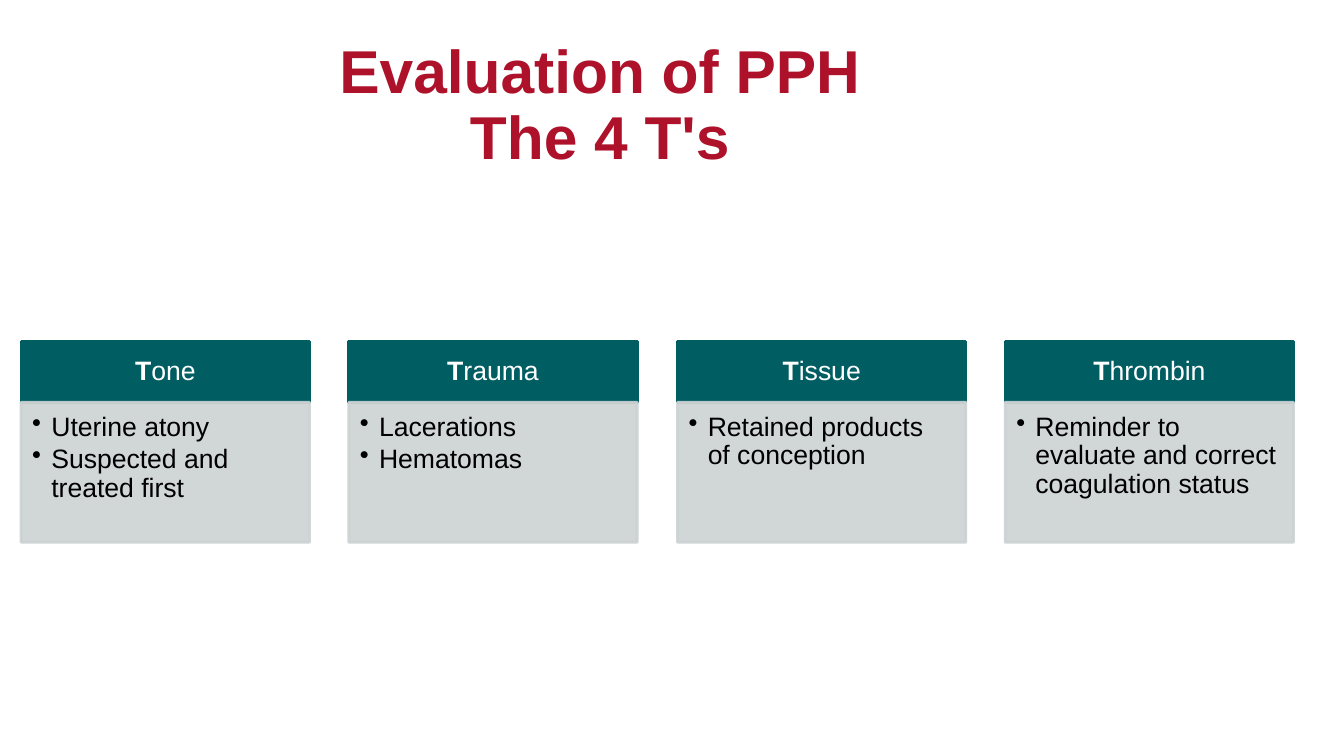
from lxml.etree import SubElement
from pptx import Presentation
from pptx.dml.color import RGBColor
from pptx.enum.shapes import MSO_SHAPE as Shape
from pptx.enum.text import MSO_ANCHOR as Anchor, MSO_AUTO_SIZE as Fit, PP_ALIGN as Align
from pptx.oxml.ns import qn
from pptx.util import Pt

PX = 9144  # 100 px to the inch
FONT = "Arial"
RED = RGBColor(0xAD, 0x12, 0x2A)
TEAL = RGBColor(0x00, 0x5E, 0x63)
GREY = RGBColor(0xCC, 0xD2, 0xD3)
WHITE = RGBColor(0xFF, 0xFF, 0xFF)
BLACK = RGBColor(0x00, 0x00, 0x00)

HEAD = 60  # height of a card's heading
CARD = 286  # width of a card
CAUSES = [
    ("Tone", ["Uterine atony", "Suspected and treated first"]),
    ("Trauma", ["Lacerations", "Hematomas"]),
    ("Tissue", ["Retained products of conception"]),
    ("Thrombin", ["Reminder to evaluate and correct coagulation status"]),
]


def style(font, size, color, bold=False):
    font.name, font.size, font.bold = FONT, Pt(size), bold
    font.color.rgb = color


def inset(frame, left, top, right, bottom):
    frame.margin_left, frame.margin_top = left * PX, top * PX
    frame.margin_right, frame.margin_bottom = right * PX, bottom * PX
    frame.word_wrap = True


def fade(paint, share):
    """Set the opacity of a solid fill, in percent."""
    color = paint.find(qn("a:solidFill"))[0]
    SubElement(color, qn("a:alpha"), val=str(share * 1000))


def panel(slide, box, color):
    shape = slide.shapes.add_shape(Shape.RECTANGLE, *(n * PX for n in box))
    shape.shadow.inherit = False
    shape.fill.solid()
    shape.fill.fore_color.rgb = color
    shape.line.color.rgb = color
    shape.line.width = Pt(2)
    return shape


def bullet(para):
    props = para._p.get_or_add_pPr()
    props.set("marL", str(19 * PX))
    props.set("indent", str(-19 * PX))
    SubElement(props, qn("a:buChar"), char="•")


def title(slide, box):
    shape = slide.shapes.title
    shape.left, shape.top, shape.width, shape.height = (n * PX for n in box)
    frame = shape.text_frame
    frame.text = "Evaluation of PPH\vThe 4 T's"
    frame.auto_size = Fit.NONE
    frame.vertical_anchor = Anchor.MIDDLE
    inset(frame, 10, 0, 10, 0)
    para = frame.paragraphs[0]
    para.alignment = Align.CENTER
    para.line_spacing = 0.9
    for run in para.runs:
        style(run.font, 43.2, RED, True)


def heading(slide, box, word):
    frame = panel(slide, box, TEAL).text_frame
    frame.vertical_anchor = Anchor.MIDDLE
    inset(frame, 15, 8, 15, 8)
    para = frame.paragraphs[0]
    para.alignment = Align.CENTER
    para.line_spacing = 0.9
    # The first letter stands out in bold
    for part, bold in ((word[0], True), (word[1:], False)):
        run = para.add_run()
        run.text = part
        style(run.font, 19, WHITE, bold)


def points(slide, box, items):
    shape = panel(slide, box, GREY)
    props = shape._element.spPr
    for paint in (props, props.find(qn("a:ln"))):
        fade(paint, 90)
    frame = shape.text_frame
    frame.vertical_anchor = Anchor.TOP
    inset(frame, 11, 11, 15, 17)
    frame.text = "\n".join(items)
    for para in frame.paragraphs:
        bullet(para)
        para.alignment = Align.LEFT
        para.line_spacing = 0.9
        para.space_after = Pt(2.5)
        for run in para.runs:
            style(run.font, 19, BLACK)


def cards(slide, box):
    left, top, width, height = box
    step = (width - CARD) / (len(CAUSES) - 1)
    for i, (word, items) in enumerate(CAUSES):
        x = left + round(i * step)
        heading(slide, (x, top, CARD, HEAD), word)
        points(slide, (x, top + HEAD, CARD, height - HEAD), items)


def main():
    deck = Presentation()
    deck.slide_width, deck.slide_height = 1333 * PX, 750 * PX
    slide = deck.slides.add_slide(deck.slide_layouts[5])
    title(slide, (20, 39, 1150, 134))
    cards(slide, (21, 339, 1262, 199))
    deck.save("out.pptx")


if __name__ == "__main__":
    main()
